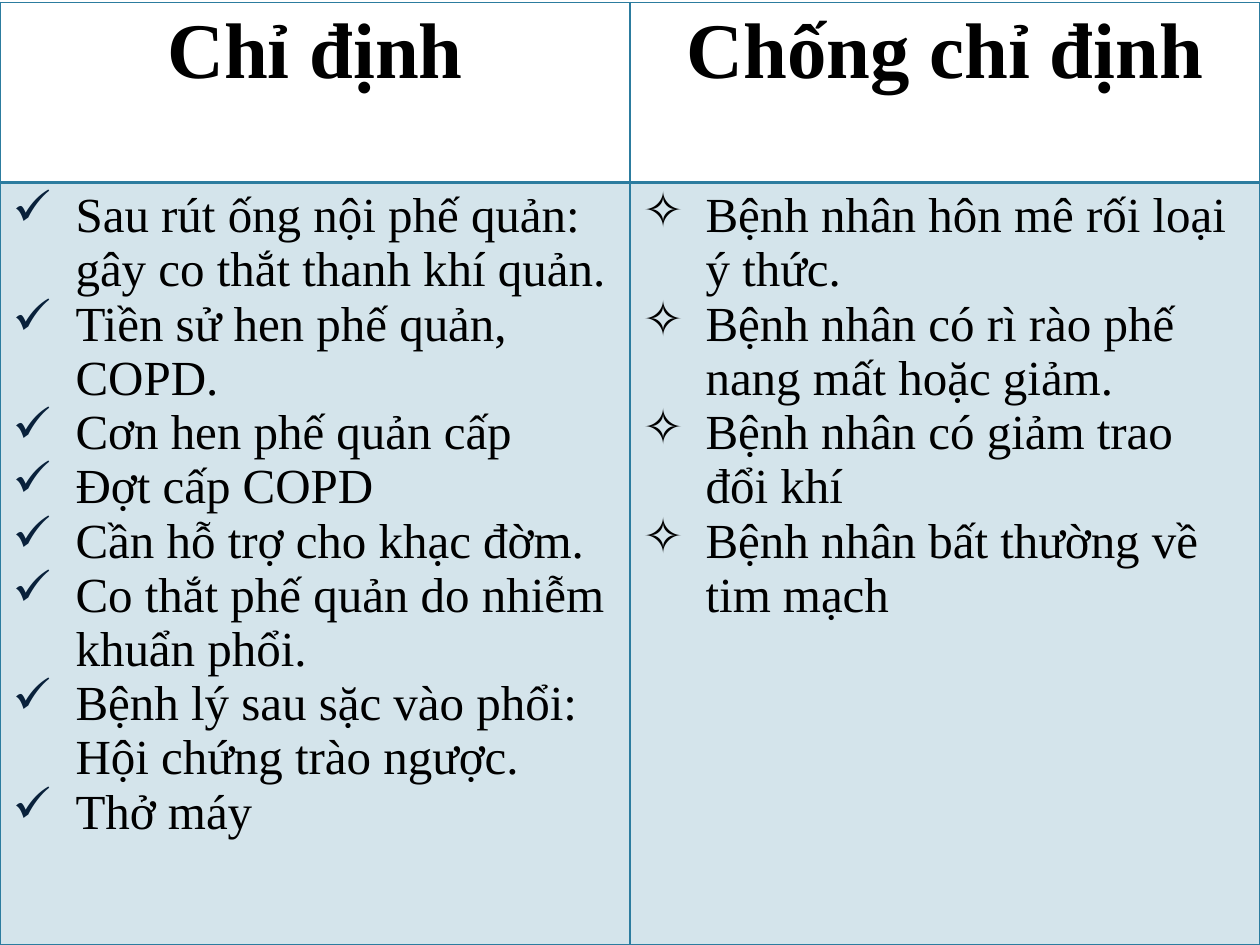
from dataclasses import dataclass

from lxml.etree import SubElement
from pptx import Presentation
from pptx.dml.color import RGBColor
from pptx.enum.text import PP_ALIGN
from pptx.oxml.ns import qn
from pptx.util import Inches, Pt


@dataclass(frozen=True)
class Theme:
    font: str = "Times New Roman"
    text: str = "000000"
    check: str = "09213B"
    accent: str = "2C7C9F"
    heading_size: int = 45
    body_size: int = 28
    thin: int = 1
    thick: int = 2
    tint: int = 20


THEME = Theme()

# Each column: heading, bullet sign, bullet colour, items
COLUMNS = [
    ("Chỉ định", "✓", THEME.check, [
        "Sau rút ống nội phế quản: gây co thắt thanh khí quản.",
        "Tiền sử hen phế quản, COPD.",
        "Cơn hen phế quản cấp",
        "Đợt cấp COPD",
        "Cần hỗ trợ cho khạc đờm.",
        "Co thắt phế quản do nhiễm khuẩn phổi.",
        "Bệnh lý sau sặc vào phổi: Hội chứng trào ngược.",
        "Thở máy",
    ]),
    ("Chống chỉ định", "✧", THEME.text, [
        "Bệnh nhân hôn mê rối loại ý thức.",
        "Bệnh nhân có rì rào phế nang mất hoặc giảm.",
        "Bệnh nhân có giảm trao đổi khí",
        "Bệnh nhân bất thường về tim mạch",
    ]),
]


def format_font(font, size, bold):
    values = {"name": THEME.font, "size": Pt(size), "bold": bold}
    for name, value in values.items():
        setattr(font, name, value)
    font.color.rgb = RGBColor.from_string(THEME.text)


def add_bullet(para, sign, color):
    properties = para._p.get_or_add_pPr()
    properties.set("marL", str(Inches(0.5)))
    properties.set("indent", str(-Inches(0.5)))
    bullet_color = SubElement(properties, qn("a:buClr"))
    SubElement(bullet_color, qn("a:srgbClr"), val=color)
    SubElement(properties, qn("a:buChar"), char=sign)


def set_borders(cell, **widths):
    properties = cell._tc.get_or_add_tcPr()
    for side in "LRTB":
        width = widths.get(side, THEME.thin)
        line = SubElement(properties, qn(f"a:ln{side}"), w=str(Pt(width)))
        fill = SubElement(line, qn("a:solidFill"))
        SubElement(fill, qn("a:srgbClr"), val=THEME.accent)


def tint_cell(cell):
    cell.fill.solid()
    cell.fill.fore_color.rgb = RGBColor.from_string(THEME.accent)
    color = cell._tc.tcPr.find(f"{qn('a:solidFill')}/{qn('a:srgbClr')}")
    SubElement(color, qn("a:alpha"), val=str(THEME.tint * 1000))


def fill_heading(cell, heading):
    set_borders(cell, B=THEME.thick)
    cell.fill.background()
    para = cell.text_frame.paragraphs[0]
    para.alignment = PP_ALIGN.CENTER
    span = para.add_run()
    span.text = heading
    format_font(span.font, THEME.heading_size, True)


def fill_list(cell, items, sign, color):
    set_borders(cell, T=THEME.thick)
    tint_cell(cell)
    frame = cell.text_frame
    for index, item in enumerate(items):
        para = frame.add_paragraph() if index else frame.paragraphs[0]
        add_bullet(para, sign, color)
        span = para.add_run()
        span.text = item
        format_font(span.font, THEME.body_size, False)


def add_comparison(page):
    frame = page.shapes.add_table(
        2, len(COLUMNS), Inches(0), Inches(0.02), Inches(10), Inches(7.48))
    table = frame.table
    table.first_row = False
    table.horz_banding = False
    for row, height in zip(table.rows, (1.43, 6.05)):
        row.height = Inches(height)
    for index, (heading, sign, color, items) in enumerate(COLUMNS):
        fill_heading(table.cell(0, index), heading)
        fill_list(table.cell(1, index), items, sign, color)


def main():
    deck = Presentation()
    deck.slide_width = Inches(10)
    deck.slide_height = Inches(7.5)
    # The slide has no title, so it starts from the blank layout
    page = deck.slides.add_slide(deck.slide_layouts[6])
    add_comparison(page)
    deck.save("out.pptx")


if __name__ == "__main__":
    main()
